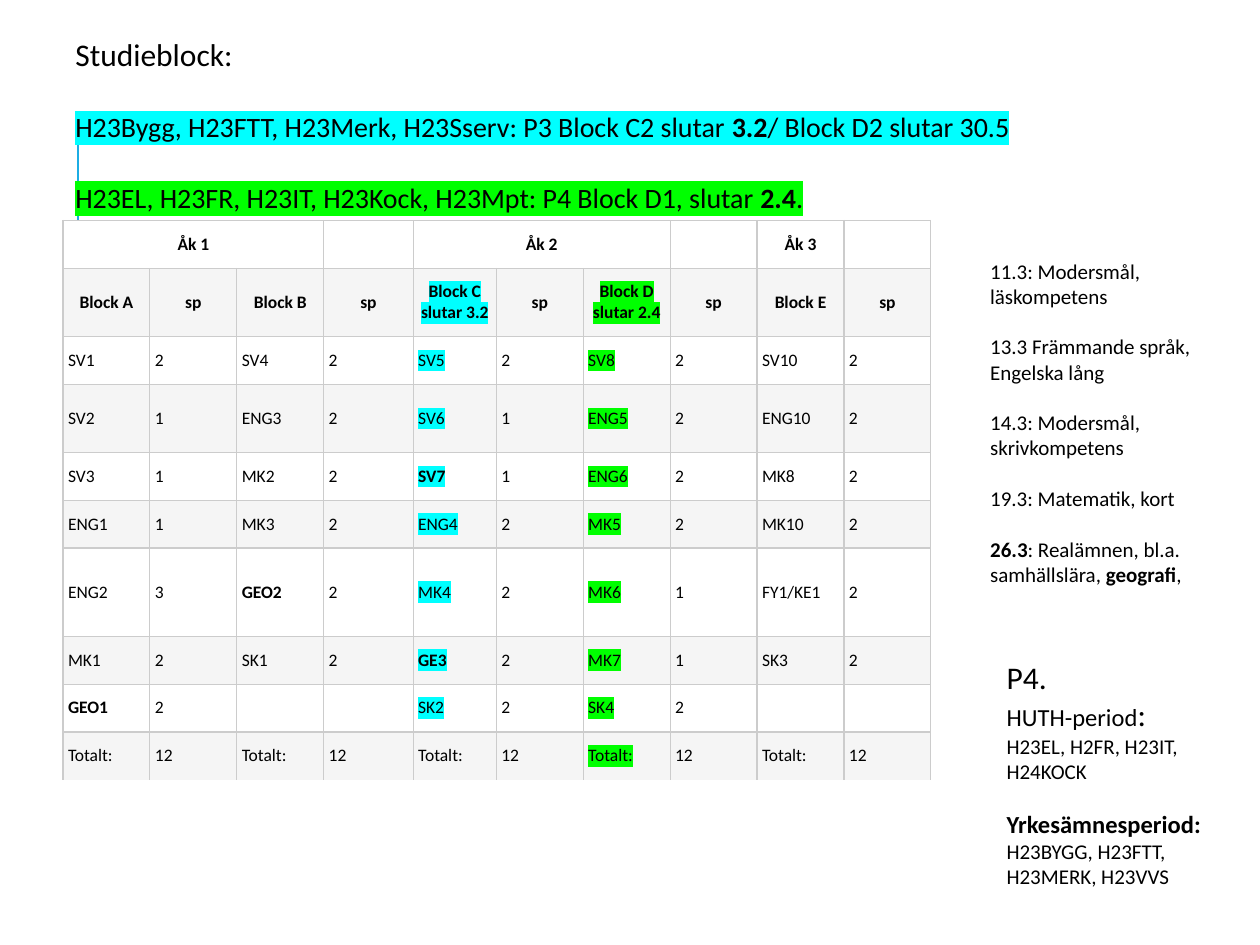
import lxml.etree
import pptx
import pptx.dml.color
import pptx.enum.shapes
import pptx.enum.text
import pptx.oxml
import pptx.oxml.ns
import pptx.util

Inches = pptx.util.Inches
Pt = pptx.util.Pt
qn = pptx.oxml.ns.qn

COLORS = {"text": "000000", "rule": "1CADE4", "border": "CCCCCC", "odd": "FFFFFF",
          "even": "F5F5F5", "cyan": "00FFFF", "green": "00FF00"}
COLUMNS = [0.69, 0.69, 0.69, 0.71, 0.66, 0.69, 0.69, 0.69, 0.69, 0.69]
HEIGHTS = [0.38, 0.54, 0.38, 0.54, 0.38, 0.38, 0.7, 0.38, 0.38, 0.38]
COURSES = [
    ["Åk 1", "", "", "", "Åk 2", "", "", "", "Åk 3", ""],
    ["Block A", "sp", "Block B", "sp", "Block C\nslutar 3.2", "sp",
     "Block D\nslutar 2.4", "sp", "Block E", "sp"],
    ["SV1", "2", "SV4", "2", "SV5", "2", "SV8", "2", "SV10", "2"],
    ["SV2", "1", "ENG3", "2", "SV6", "1", "ENG5", "2", "ENG10", "2"],
    ["SV3", "1", "MK2", "2", "SV7", "1", "ENG6", "2", "MK8", "2"],
    ["ENG1", "1", "MK3", "2", "ENG4", "2", "MK5", "2", "MK10", "2"],
    ["ENG2", "3", "GEO2", "2", "MK4", "2", "MK6", "1", "FY1/KE1", "2"],
    ["MK1", "2", "SK1", "2", "GE3", "2", "MK7", "1", "SK3", "2"],
    ["GEO1", "2", "", "", "SK2", "2", "SK4", "2", "", ""],
    ["Totalt:", "12", "Totalt:", "12", "Totalt:", "12", "Totalt:", "12", "Totalt:", "12"],
]
BOLD_COURSES = {"SV7", "GEO2", "GE3", "GEO1"}
MARKED_ROWS = {4: ("cyan", range(1, 9)), 6: ("green", range(1, 10))}


class Deck:
    """Hold the style and the current slide, and draw each kind of element."""

    def __init__(self, prs, font="Calibri"):
        self.font = font
        self.s = prs.slides.add_slide(prs.slide_layouts[6])

    def rgb(self, name):
        return pptx.dml.color.RGBColor.from_string(COLORS[name])

    def style(self, p, size, bold=False):
        p.font.name = self.font
        p.font.size = Pt(size)
        p.font.bold = bold
        p.font.color.rgb = self.rgb("text")

    def run(self, p, text, bold=None, size=None, mark=None):
        for i, line in enumerate(text.split("\n")):
            if i:
                p.add_line_break()
            r = p.add_run()
            r.text = line
            if bold is not None:
                r.font.bold = bold
            if size:
                r.font.size = Pt(size)
            if mark:
                highlight = lxml.etree.SubElement(r.font._element, qn("a:highlight"))
                lxml.etree.SubElement(highlight, qn("a:srgbClr"), val=COLORS[mark])

    def line(self, x1, y1, x2, y2, color, width):
        c = self.s.shapes.add_connector(pptx.enum.shapes.MSO_CONNECTOR.STRAIGHT,
                                        Inches(x1), Inches(y1), Inches(x2), Inches(y2))
        c.line.color.rgb = self.rgb(color)
        c.line.width = Pt(width)
        lxml.etree.SubElement(c._element.spPr, qn("a:effectLst"))

    def text(self, x, y, w, h, paragraphs):
        sp = self.s.shapes.add_textbox(Inches(x), Inches(y), Inches(w), Inches(h))
        tf = sp.text_frame
        tf.word_wrap = True
        tf.auto_size = pptx.enum.text.MSO_AUTO_SIZE.SHAPE_TO_FIT_TEXT
        for i, (size, before, bold, runs) in enumerate(paragraphs):
            p = tf.add_paragraph() if i else tf.paragraphs[0]
            self.style(p, size, bold)
            p.space_before = Pt(before)
            for r in runs:
                self.run(p, **r)

    def borders(self, cell, last):
        tcPr = cell._tc.get_or_add_tcPr()
        for i, side in enumerate(["lnL", "lnR", "lnT", "lnB"]):
            ln = lxml.etree.Element(qn(f"a:{side}"), w=str(Pt(0.75)))
            if last and side == "lnB":
                lxml.etree.SubElement(ln, qn("a:noFill"))
            else:
                fill = lxml.etree.SubElement(ln, qn("a:solidFill"))
                lxml.etree.SubElement(fill, qn("a:srgbClr"), val=COLORS["border"])
            tcPr.insert(i, ln)

    def cell(self, cell, text, header, fill, mark, last):
        cell.margin_left = cell.margin_right = Inches(0.04)
        cell.margin_top = cell.margin_bottom = Inches(0.03)
        cell.vertical_anchor = pptx.enum.text.MSO_ANCHOR.MIDDLE
        cell.fill.solid()
        cell.fill.fore_color.rgb = self.rgb(fill)
        self.borders(cell, last)
        p = cell.text_frame.paragraphs[0]
        self.style(p, 10, header or text in BOLD_COURSES)
        if header:
            p.alignment = pptx.enum.text.PP_ALIGN.CENTER
        if text:
            self.run(p, text, bold=header or text in BOLD_COURSES, mark=mark)

    def table(self, x, y, rows, widths, heights):
        table = self.s.shapes.add_table(len(rows), len(widths), Inches(x), Inches(y),
                                        Inches(sum(widths)), Inches(sum(heights))).table
        table.first_row = table.horz_banding = False
        for column, w in zip(table.columns, widths):
            column.width = Inches(w)
        for row, h in zip(table.rows, heights):
            row.height = Inches(h)
        for i, row in enumerate(rows):
            for j, text in enumerate(row):
                mark, marked = MARKED_ROWS.get(j, (None, ()))
                self.cell(table.cell(i, j), text, i < 2, "even" if i % 2 else "odd",
                          mark if i in marked else None, i == len(rows) - 1)
        for first in (0, 4):
            table.cell(0, first).merge(table.cell(0, first + 2))


def main():
    prs = pptx.Presentation()
    prs.slide_width, prs.slide_height = Inches(10), Inches(7.5)
    deck = Deck(prs)
    deck.line(0.62, 1.9, 0.62, 0.9, "rule", 1.5)
    deck.table(0.5, 1.75, COURSES, COLUMNS, HEIGHTS)

    exams = [
        [dict(text="11.3: Modersmål, läskompetens")],
        [dict(text="13.3 Främmande språk, Engelska lång")],
        [dict(text="14.3: Modersmål, skrivkompetens")],
        [dict(text="19.3: Matematik, kort")],
        [dict(text="26.3", bold=True), dict(text=": Realämnen, bl.a. samhällslära, "),
         dict(text="geografi", bold=True), dict(text=",")],
    ]
    deck.text(7.76, 2, 1.89, 2.93,
              [(12, 14.5 if i else 0, False, runs) for i, runs in enumerate(exams)])

    deck.text(0.5, 0.23, 7.8, 1.55, [
        (18, 0, False, [dict(text="Studieblock:")]),
        (16, 21, False, [
            dict(text="H23Bygg, H23FTT, H23Merk, H23Sserv: P3 Block C2 slutar", mark="cyan"),
            dict(text=" 3.2", bold=True, mark="cyan"),
            dict(text="/ Block D2 slutar 30.5", mark="cyan")]),
        (16, 21, False, [
            dict(text="H23EL, H23FR, H23IT, H23Kock, H23Mpt: P4 Block D1, slutar ", mark="green"),
            dict(text="2.4", bold=True, mark="green"),
            dict(text=".", mark="green")]),
    ])

    deck.text(7.89, 5.17, 2.09, 1.95, [
        (18, 0, False, [dict(text="P4.")]),
        (14, 0, False, [dict(text="HUTH-period"), dict(text=":", size=18)]),
        (12, 0, False, [dict(text="H23EL, H2FR, H23IT, H24KOCK")]),
        (14, 14.5, True, [dict(text="Yrkesämnesperiod:")]),
        (12, 0, False, [dict(text="H23BYGG, H23FTT, H23MERK, H23VVS")]),
    ])
    prs.save("out.pptx")


if __name__ == "__main__":
    main()
